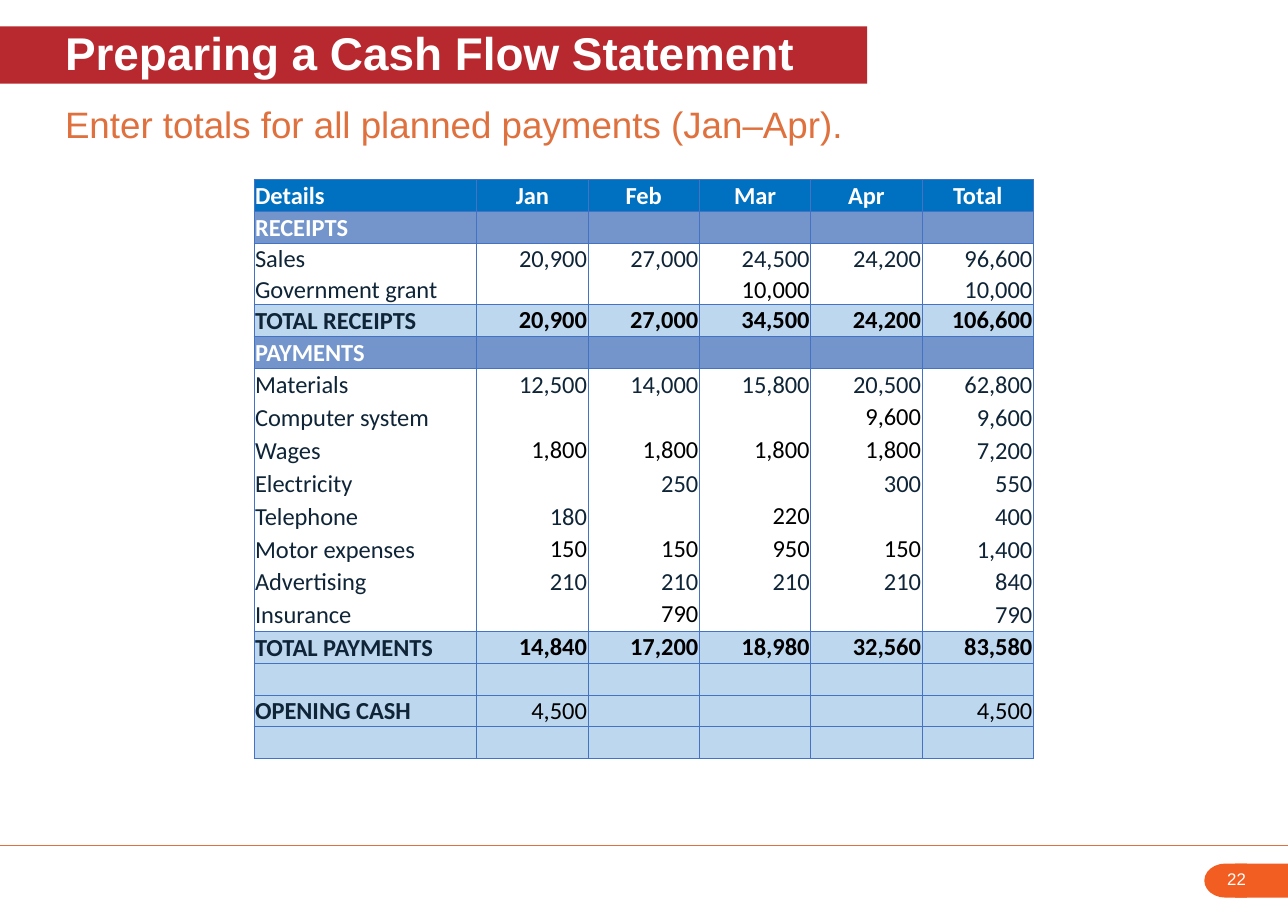
from lxml.etree import SubElement
from pptx import Presentation
from pptx.dml.color import RGBColor
from pptx.enum.shapes import MSO_CONNECTOR, MSO_SHAPE
from pptx.enum.text import MSO_ANCHOR, PP_ALIGN
from pptx.oxml.ns import qn
from pptx.util import Inches, Pt

WHITE = RGBColor(0xFF, 0xFF, 0xFF)
BLACK = RGBColor(0, 0, 0)
NAVY = RGBColor(0x0F, 0x25, 0x37)
RED = RGBColor(0xB8, 0x29, 0x2F)
ORANGE = RGBColor(0xDF, 0x71, 0x3E)
BADGE = RGBColor(0xF2, 0x5E, 0x22)
HEADER_BLUE = RGBColor(0x00, 0x70, 0xC0)
SECTION_BLUE = RGBColor(0x73, 0x95, 0xCB)
TOTAL_BLUE = RGBColor(0xBD, 0xD7, 0xEE)
BORDER = RGBColor(0x44, 0x72, 0xC4)

FILLS = {"header": HEADER_BLUE, "section": SECTION_BLUE, "receipt": WHITE,
         "payment": WHITE, "total": TOTAL_BLUE, "cash": TOTAL_BLUE}
ROW_UNITS = {"receipt": 28, "payment": 30}
ALL = (1, 2, 3, 4, 5)
MONTHS = (1, 2, 3, 4)

# Each row: kind, cell texts, columns whose figures are black.
ROWS = [
    ("header", ["Details", "Jan", "Feb", "Mar", "Apr", "Total"], ()),
    ("section", ["RECEIPTS", "", "", "", "", ""], ()),
    ("receipt", ["Sales", "20,900", "27,000", "24,500", "24,200", "96,600"], ()),
    ("receipt", ["Government grant", "", "", "10,000", "", "10,000"], (3,)),
    ("total", ["TOTAL RECEIPTS", "20,900", "27,000", "34,500", "24,200", "106,600"], ALL),
    ("section", ["PAYMENTS", "", "", "", "", ""], ()),
    ("payment", ["Materials", "12,500", "14,000", "15,800", "20,500", "62,800"], ()),
    ("payment", ["Computer system", "", "", "", "9,600", "9,600"], (4,)),
    ("payment", ["Wages", "1,800", "1,800", "1,800", "1,800", "7,200"], MONTHS),
    ("payment", ["Electricity", "", "250", "", "300", "550"], ()),
    ("payment", ["Telephone", "180", "", "220", "", "400"], (3,)),
    ("payment", ["Motor expenses", "150", "150", "950", "150", "1,400"], MONTHS),
    ("payment", ["Advertising", "210", "210", "210", "210", "840"], ()),
    ("payment", ["Insurance", "", "790", "", "", "790"], (2,)),
    ("total", ["TOTAL PAYMENTS", "14,840", "17,200", "18,980", "32,560", "83,580"], ALL),
    ("cash", ["", "", "", "", "", ""], ()),
    ("cash", ["OPENING CASH", "4,500", "", "", "", "4,500"], ALL),
    ("cash", ["", "", "", "", "", ""], ()),
]


def part(box, x, y, w, h):
    """Return the part of a box given in percent of its size."""
    left, top, width, height = box
    return (int(left + width * x / 100), int(top + height * y / 100),
            int(width * w / 100), int(height * h / 100))


def write(p, text, **font):
    """Add one formatted run to a paragraph."""
    r = p.add_run()
    r.text = text
    color = font.pop("color")
    for name, value in font.items():
        setattr(r.font, name, value)
    r.font.color.rgb = color


def add_block(s, kind, box, color):
    """Add a plain filled shape."""
    sp = s.shapes.add_shape(kind, *box)
    sp.shadow.inherit = False
    sp.fill.solid()
    sp.fill.fore_color.rgb = color
    sp.line.fill.background()
    return sp


def add_heading(sp, text, **font):
    """Set a left-aligned heading line in a shape."""
    tf = sp.text_frame
    frame = {"word_wrap": True, "vertical_anchor": MSO_ANCHOR.MIDDLE,
             "margin_left": Inches(0.59), "margin_top": 0,
             "margin_right": 0, "margin_bottom": Inches(0.05)}
    for name, value in frame.items():
        setattr(tf, name, value)
    p = tf.paragraphs[0]
    p.alignment = PP_ALIGN.LEFT
    write(p, text, name="Arial", **font)


def add_headings(s, box):
    """Place the title band and the instruction below it."""
    band = add_block(s, MSO_SHAPE.RECTANGLE, part(box, 0, 0, 67.32, 44.8), RED)
    add_heading(band, "Preparing a Cash Flow Statement", size=Pt(30), bold=True, color=WHITE)
    line = s.shapes.add_textbox(*part(box, 0, 56, 100, 44))
    add_heading(line, "Enter totals for all planned payments (Jan–Apr).", size=Pt(24), color=ORANGE)


def set_borders(cell, sides):
    """Draw the named sides of a cell and clear the others."""
    tc_pr = cell._tc.get_or_add_tcPr()
    for side in "LRTB":
        ln = SubElement(tc_pr, qn(f"a:ln{side}"), w=str(Pt(0.5)))
        if side in sides:
            fill = SubElement(ln, qn("a:solidFill"))
            SubElement(fill, qn("a:srgbClr"), val=str(BORDER))
        else:
            SubElement(ln, qn("a:noFill"))


def fill_cell(cell, kind, col, text, black):
    """Format one table cell and write its text."""
    anchor = MSO_ANCHOR.TOP if black else MSO_ANCHOR.MIDDLE
    inset = Inches(0.01)
    layout = {"margin_left": inset, "margin_right": inset, "margin_top": inset,
              "margin_bottom": 0, "vertical_anchor": anchor}
    for name, value in layout.items():
        setattr(cell, name, value)
    cell.fill.solid()
    cell.fill.fore_color.rgb = FILLS[kind]
    p = cell.text_frame.paragraphs[0]
    if not text:
        SubElement(p._p, qn("a:endParaRPr"), sz="1600")
        return
    figures = PP_ALIGN.CENTER if kind == "header" else PP_ALIGN.RIGHT
    p.alignment = figures if col else PP_ALIGN.LEFT
    color = WHITE if kind in ("header", "section") else BLACK if black else NAVY
    bold = kind in ("header", "section", "total") or (kind == "cash" and col == 0)
    write(p, text, name="Calibri", size=Pt(16), bold=bold, color=color)


def add_cash_flow(s, box):
    """Place the cash flow table on a grid of seven column units."""
    table = s.shapes.add_table(len(ROWS), 6, *box).table
    table.first_row = table.horz_banding = False
    units = [ROW_UNITS.get(kind, 29) for kind, _, _ in ROWS]
    for col, column in enumerate(table.columns):
        column.width = box[2] * (1 if col else 2) // 7
    for i, (kind, texts, black) in enumerate(ROWS):
        table.rows[i].height = box[3] * units[i] // sum(units)
        sides = "LRTB"
        if kind in ROW_UNITS:
            sides = "LR"
            sides += "T" if ROWS[i - 1][0] != kind else ""
            sides += "B" if ROWS[i + 1][0] != kind else ""
        for col, text in enumerate(texts):
            cell = table.cell(i, col)
            set_borders(cell, sides)
            fill_cell(cell, kind, col, text, col in black)


def add_footer(s, box):
    """Place the footer rule and the page number badge."""
    left, top, width, _ = box
    rule = s.shapes.add_connector(MSO_CONNECTOR.STRAIGHT, left, top, left + width, top)
    rule.line.color.rgb = ORANGE
    rule.line.width = Pt(0.75)
    SubElement(rule._element.spPr, qn("a:effectLst"))
    badge = part(box, 93.5, 27, 6.5, 52.5)
    add_block(s, MSO_SHAPE.FLOWCHART_DELAY, part(badge, 0, 0, 51, 100), BADGE).rotation = 180
    add_block(s, MSO_SHAPE.RECTANGLE, part(badge, 37, 0, 63, 100), BADGE)
    number = s.shapes.add_textbox(*part(badge, 14.5, 0, 74, 90))
    number.text_frame.word_wrap = True
    write(number.text_frame.paragraphs[0], "22", name="Arial", size=Pt(11), color=WHITE)


def main():
    """Build the slide and save it."""
    prs = Presentation()
    prs.slide_width, prs.slide_height = Inches(11.69), Inches(8.27)
    s = prs.slides.add_slide(prs.slide_layouts[6])
    page = (0, 0, prs.slide_width, prs.slide_height)
    add_footer(s, part(page, 0, 92.86, 100, 7.14))
    add_headings(s, part(page, 0, 2.9, 100, 14.03))
    add_cash_flow(s, part(page, 19.72, 19.71, 60.52, 63.6))
    prs.save("out.pptx")


if __name__ == "__main__":
    main()
